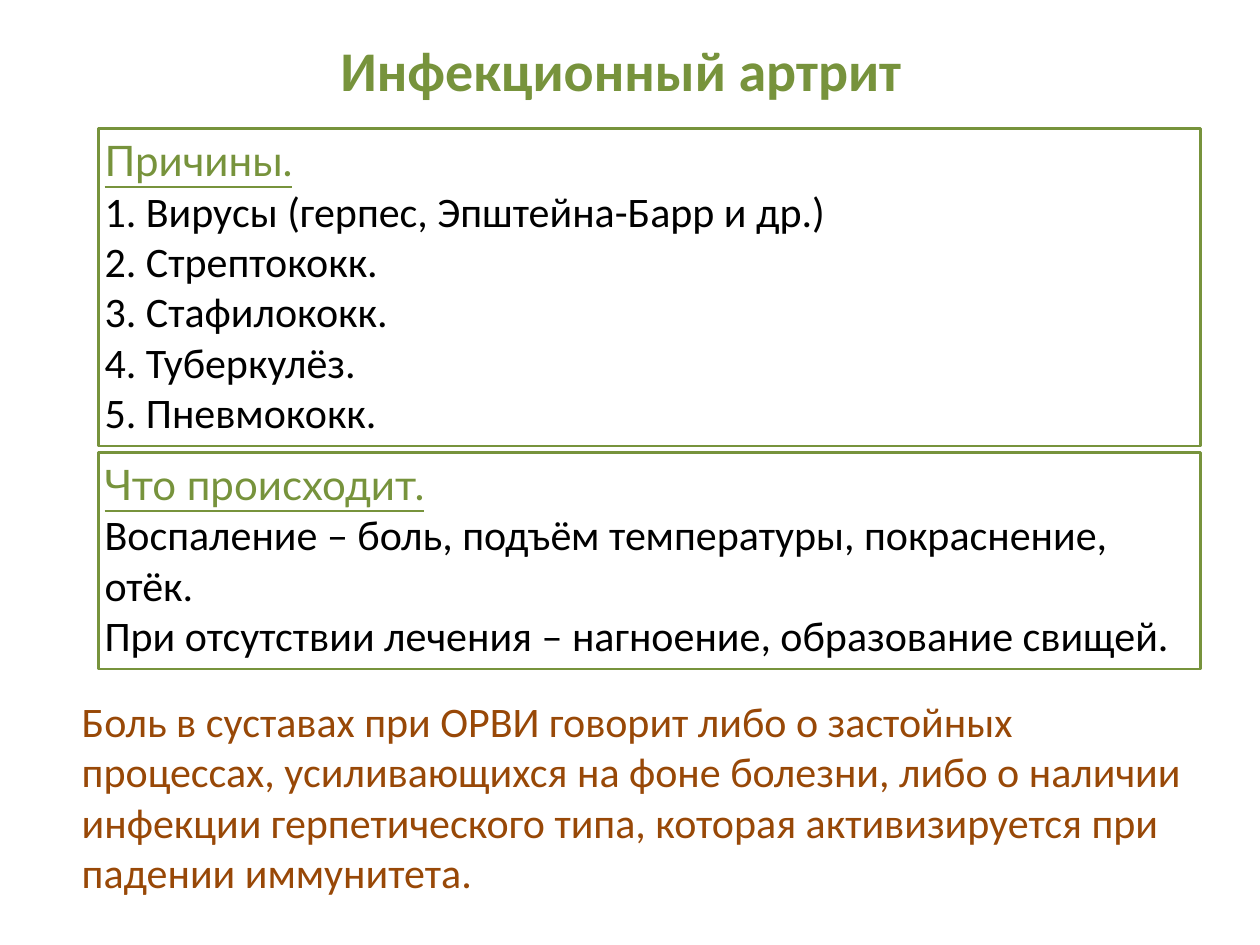
from pptx import Presentation
from pptx.dml.color import RGBColor
from pptx.enum import shapes, text
from pptx.util import Inches, Pt

COLORS = {"green": "77933C", "black": "000000", "brown": "984807"}

TITLE = {"name": "Calibri", "size": Pt(32), "bold": True}
HEADING = {"name": "Lato", "size": Pt(24), "underline": True}
BODY = {"name": "Calibri", "size": Pt(24)}

CAUSES = [
    "Вирусы (герпес, Эпштейна-Барр и др.)",
    "Стрептококк.",
    "Стафилококк.",
    "Туберкулёз.",
    "Пневмококк.",
]
# \v marks a line break inside the paragraph
COURSE = ("Воспаление – боль, подъём температуры, покраснение, отёк.\v"
          "При отсутствии лечения – нагноение, образование свищей.")
NOTE = ("Боль в суставах при ОРВИ говорит либо о застойных процессах, "
        "усиливающихся на фоне болезни, либо о наличии инфекции "
        "герпетического типа, которая активизируется при падении иммунитета.")


def rgb(name):
    return RGBColor.from_string(COLORS[name])


def write(p, words, fmt, color, align=text.PP_ALIGN.LEFT):
    p.text = words
    p.alignment = align
    for r in p.runs:
        for key, value in fmt.items():
            setattr(r.font, key, value)
        r.font.color.rgb = rgb(color)


def set_title(slide, words, left, top, width, height):
    sp = slide.shapes.title
    sp.left, sp.top, sp.width, sp.height = map(Inches, (left, top, width, height))
    tf = sp.text_frame
    tf.word_wrap = False
    tf.auto_size = text.MSO_AUTO_SIZE.SHAPE_TO_FIT_TEXT
    tf.vertical_anchor = text.MSO_ANCHOR.TOP
    write(tf.paragraphs[0], words, TITLE, "green", text.PP_ALIGN.CENTER)


def add_panel(slide, heading, lines, top, height):
    sp = slide.shapes.add_shape(shapes.MSO_SHAPE.RECTANGLE, Inches(0.78),
                                Inches(top), Inches(8.75), Inches(height))
    sp.shadow.inherit = False
    sp.fill.background()
    sp.line.color.rgb = rgb("green")
    sp.line.width = Pt(1.5)
    tf = sp.text_frame
    tf.word_wrap = True
    tf.auto_size = text.MSO_AUTO_SIZE.SHAPE_TO_FIT_TEXT
    tf.vertical_anchor = text.MSO_ANCHOR.TOP
    for side in ("left", "right", "top", "bottom"):
        setattr(tf, f"margin_{side}", Inches(0.05))
    write(tf.paragraphs[0], heading, HEADING, "green")
    for line in lines:
        write(tf.add_paragraph(), line, BODY, "black")


def add_note(slide, words, left, top, width, height):
    sp = slide.shapes.add_textbox(*map(Inches, (left, top, width, height)))
    tf = sp.text_frame
    tf.word_wrap = True
    tf.auto_size = text.MSO_AUTO_SIZE.SHAPE_TO_FIT_TEXT
    write(tf.paragraphs[0], words, BODY, "brown")


def main():
    prs = Presentation()
    prs.slide_width, prs.slide_height = Inches(10), Inches(7.5)
    slide = prs.slides.add_slide(prs.slide_layouts[5])

    set_title(slide, "Инфекционный артрит", 2.58, 0.23, 4.7, 0.64)

    # Framed panels: causes and course of the disease
    numbered = [f"{i}. {cause}" for i, cause in enumerate(CAUSES, 1)]
    add_panel(slide, "Причины.", numbered, 1.02, 2.52)
    add_panel(slide, "Что происходит.", [COURSE], 3.59, 1.72)

    # Closing remark
    add_note(slide, NOTE, 0.55, 5.47, 8.98, 1.72)

    prs.save("out.pptx")


if __name__ == "__main__":
    main()
